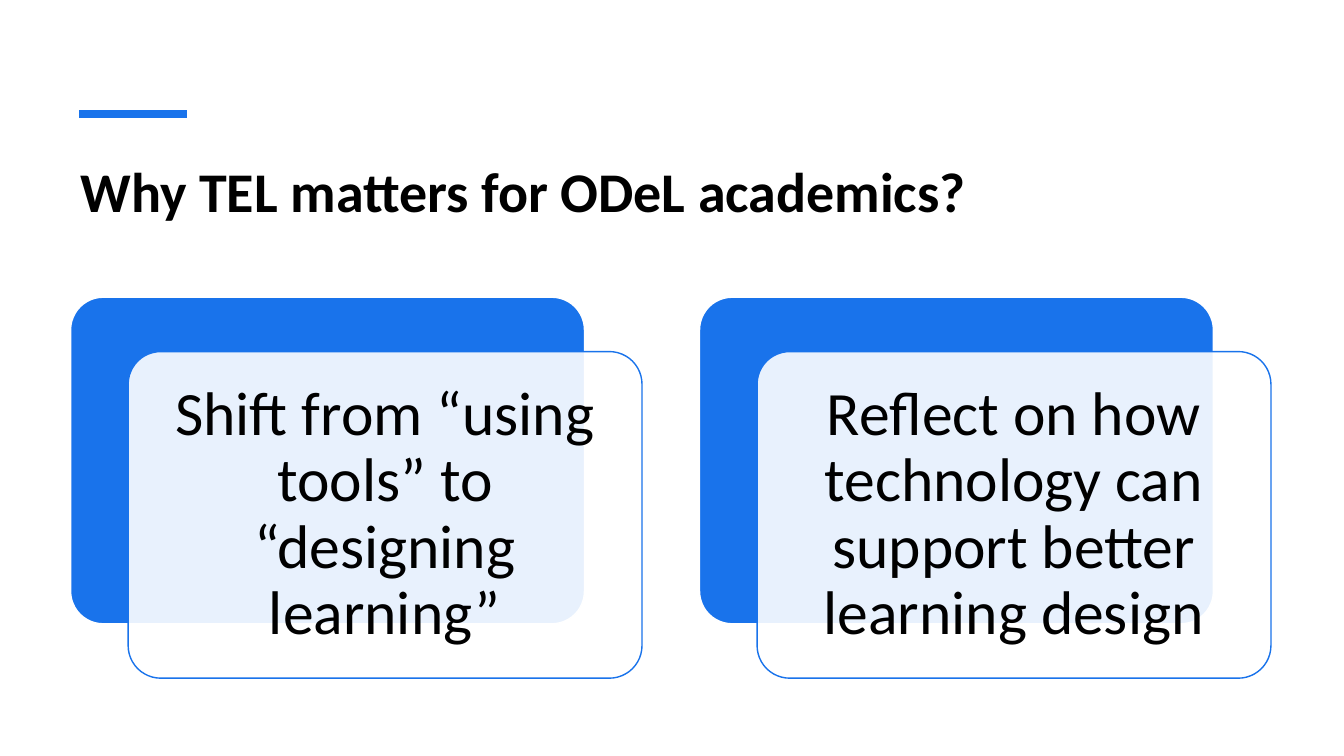
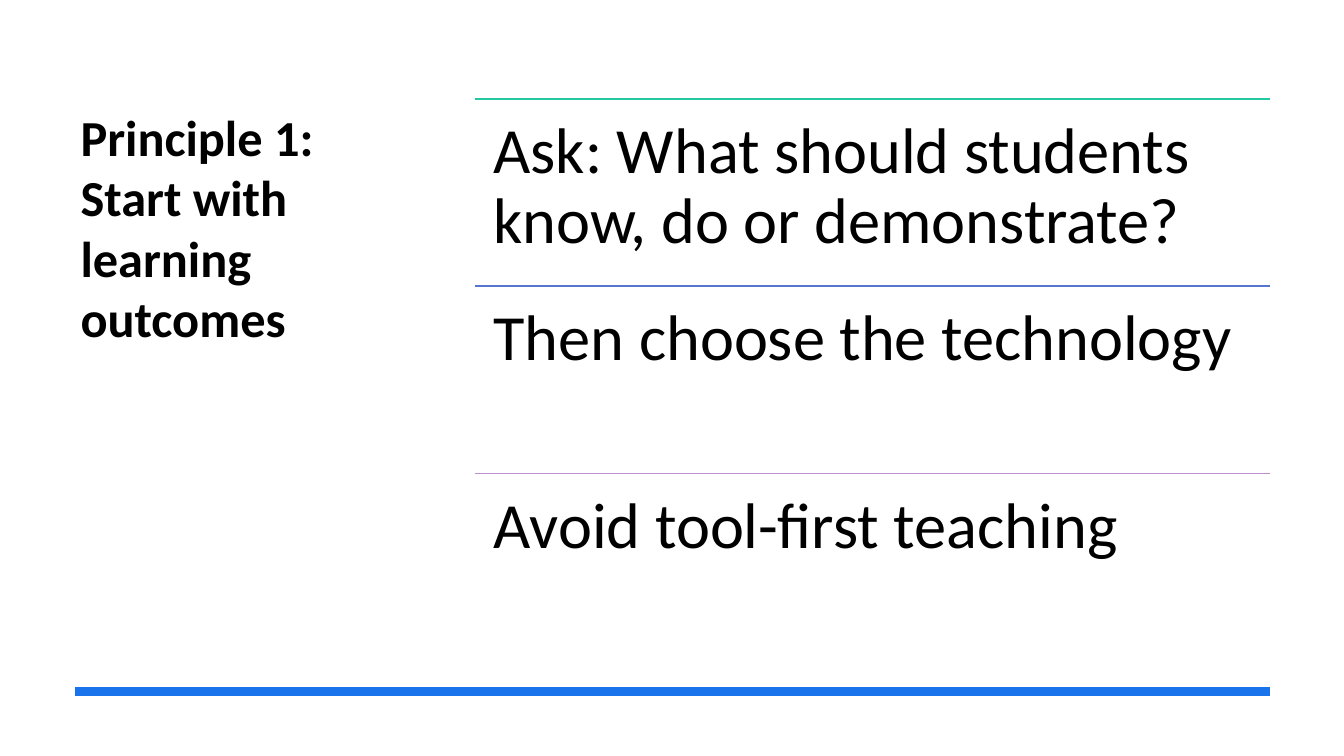
from dataclasses import dataclass

from lxml.etree import SubElement
from pptx import Presentation
from pptx.dml.color import RGBColor as RGB
from pptx.enum.shapes import MSO_CONNECTOR as LINK, MSO_SHAPE as SHAPE
from pptx.enum.text import MSO_ANCHOR as ANCHOR, PP_ALIGN as ALIGN
from pptx.oxml.ns import qn
from pptx.util import Cm, Pt


@dataclass(frozen=True)
class Theme:
    font: str = "Calibri"
    ink: str = "000000"
    paper: str = "FFFFFF"
    blue: str = "1973EB"
    rules: tuple = ("25C8A2", "5775CF", "BF8ED1")
    head: int = 40
    side: int = 36
    card: int = 44
    row: int = 46
    thin: int = 1
    thick: int = 6
    left: float = 1.78
    right: float = 32


THEME = Theme()


def color(code):
    return RGB.from_string(code)


def write(shape, text, size, pad, bold=False, align=ALIGN.LEFT,
          anchor=ANCHOR.TOP, lead=0.9):
    """Fill a shape with one paragraph; pad is (side, top) in cm."""
    frame = shape.text_frame
    frame.word_wrap = True
    frame.vertical_anchor = anchor
    frame.margin_left = frame.margin_right = Cm(pad[0])
    frame.margin_top = frame.margin_bottom = Cm(pad[1])
    para = frame.paragraphs[0]
    para.text = text
    para.alignment = align
    para.line_spacing = lead
    font = para.font
    font.name, font.size, font.bold = THEME.font, Pt(size), bold
    font.color.rgb = color(THEME.ink)


def add_text(slide, box, text, size, pad, **style):
    write(slide.shapes.add_textbox(*map(Cm, box)), text, size, pad, **style)


def add_title(slide, box, text, size):
    add_text(slide, box, text, size, (0.25, 0.13), bold=True, lead=1.0)


def add_rule(slide, left, right, top, code, width):
    """Draw a level line without a shadow."""
    line = slide.shapes.add_connector(
        LINK.STRAIGHT, Cm(left), Cm(top), Cm(right), Cm(top))
    line.line.color.rgb = color(code)
    line.line.width = Pt(width)
    SubElement(line._element.spPr, qn("a:effectLst"))


def add_panel(slide, left, top, fill, edge):
    panel = slide.shapes.add_shape(
        SHAPE.ROUNDED_RECTANGLE, Cm(left), Cm(top), Cm(12.95), Cm(8.23))
    panel.adjustments[0] = 0.1
    panel.shadow.inherit = False
    panel.fill.solid()
    panel.fill.fore_color.rgb = color(fill)
    panel.line.color.rgb = color(edge)
    panel.line.width = Pt(THEME.thin)
    return panel


def fade(shape, percent):
    """Set how opaque the solid fill is."""
    tint = shape._element.spPr.find(qn("a:solidFill"))[0]
    SubElement(tint, qn("a:alpha"), val=str(percent * 1000))


def add_card(slide, left, top, text):
    """Put a clear text panel over a blue one, shifted down and right."""
    add_panel(slide, left, top, THEME.blue, THEME.paper)
    front = add_panel(slide, left + 1.45, top + 1.37, THEME.paper, THEME.blue)
    fade(front, 90)
    write(front, text, THEME.card, (0.46, 0.46),
          align=ALIGN.CENTER, anchor=ANCHOR.MIDDLE)


def build_why(slide):
    add_title(slide, (THEME.left, 3.81, 30.25, 3.05),
              "Why TEL matters for ODeL academics?", THEME.head)
    add_rule(slide, 2, 4.7, 2.87, THEME.blue, THEME.thick)
    cards = ("Shift from “using tools” to “designing learning”",
             "Reflect on how technology can support better learning design")
    for i, text in enumerate(cards):
        add_card(slide, THEME.left + i * 15.85, 7.49, text)


def build_goals(slide):
    add_title(slide, (THEME.left, 2.54, 8.33, 11.56),
              "Principle 1: Start with learning outcomes", THEME.side)
    add_rule(slide, 1.88, THEME.right, 17.42, THEME.blue, THEME.thick)
    left, first, step = 11.96, 2.49, 4.72
    rows = ("Ask: What should students know, do or demonstrate?",
            "Then choose the technology",
            "Avoid tool-first teaching")
    for i, (text, code) in enumerate(zip(rows, THEME.rules)):
        top = first + i * step
        add_rule(slide, left, THEME.right, top, code, THEME.thin)
        add_text(slide, (left, top, THEME.right - left, step),
                 text, THEME.row, (0.48, 0.48))


def main():
    deck = Presentation()
    deck.slide_width, deck.slide_height = Cm(33.87), Cm(19.05)
    for build in (build_why, build_goals):
        build(deck.slides.add_slide(deck.slide_layouts[6]))
    deck.save("out.pptx")


if __name__ == "__main__":
    main()
